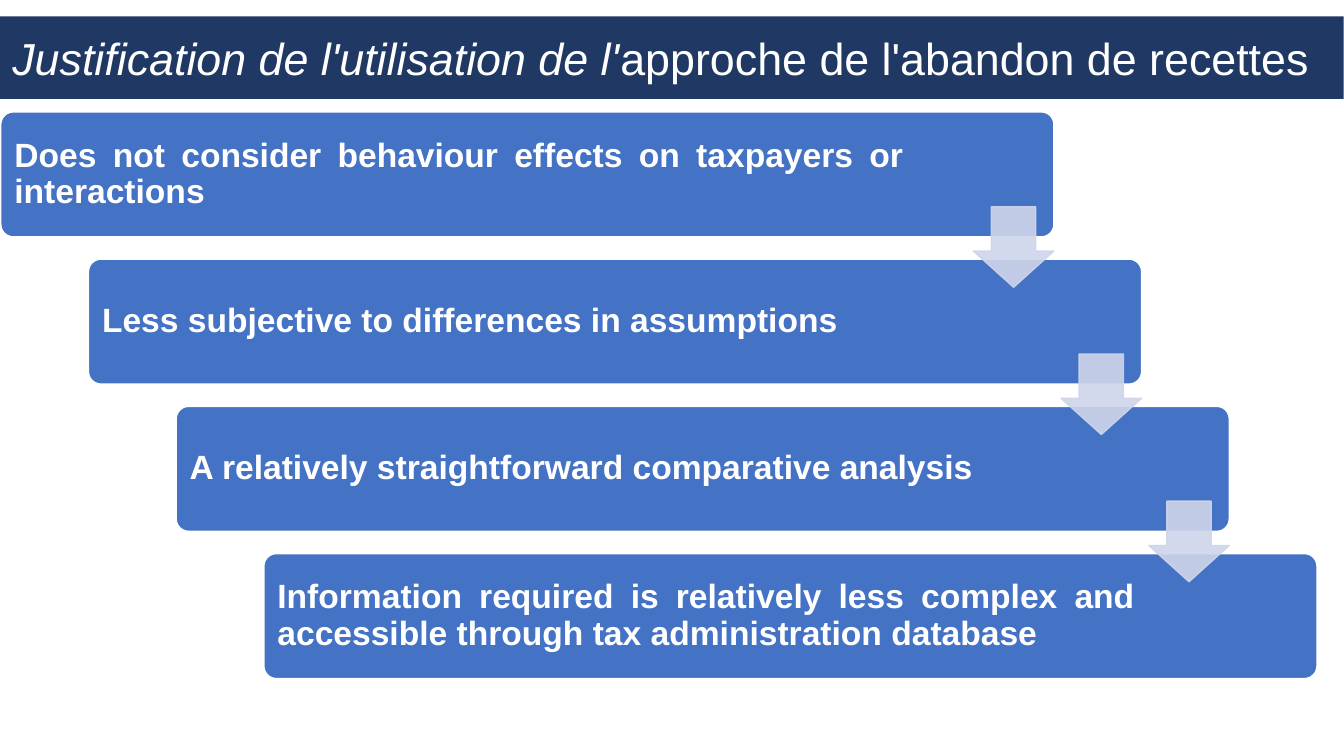
import pptx
import pptx.dml.color
import pptx.enum.shapes
import pptx.enum.text
import pptx.oxml
import pptx.oxml.ns
import pptx.util
from dataclasses import dataclass

Cm = pptx.util.Cm
Pt = pptx.util.Pt
RGB = pptx.dml.color.RGBColor.from_string
SHAPE = pptx.enum.shapes.MSO_SHAPE
ALIGN = pptx.enum.text.PP_ALIGN
MIDDLE = pptx.enum.text.MSO_ANCHOR.MIDDLE
qn = pptx.oxml.ns.qn


@dataclass(frozen=True)
class Theme:
    font: str = "Arial"
    title_size: int = 32
    step_size: int = 24
    banner: str = "203864"
    step: str = "4472C4"
    arrow: str = "CFD5EA"
    white: str = "FFFFFF"
    inset: float = 0.25


T = Theme()

TITLE = [("Justification de l'utilisation de l'", True),
         ("approche de l'abandon de recettes ", False)]
# Step text and the room kept free on its right for the arrows
STEPS = [("Does not consider behaviour effects on taxpayers or interactions", 3.7),
         ("Less subjective to differences in assumptions", 4.5),
         ("A relatively straightforward comparative analysis", 4.5),
         ("Information required is relatively less complex and "
          "accessible through tax administration database", 4.5)]


def set_frame(tf, right=T.inset):
    tf.word_wrap = True
    tf.vertical_anchor = MIDDLE
    tf.margin_left = tf.margin_top = tf.margin_bottom = Cm(T.inset)
    tf.margin_right = Cm(right)


def add_run(p, text, size, bold=False, italic=False):
    r = p.add_run()
    r.text = text
    r.font.name, r.font.size = T.font, Pt(size)
    r.font.bold, r.font.italic = bold, italic
    r.font.color.rgb = RGB(T.white)


def paint(sp, color, line, alpha=None):
    sp.shadow.inherit = False
    sp.fill.solid()
    sp.fill.fore_color.rgb = RGB(color)
    sp.line.color.rgb = RGB(line)
    sp.line.width = Pt(1)
    if alpha:
        for clr in sp._element.spPr.iter(qn("a:srgbClr")):
            clr.append(pptx.oxml.parse_xml(
                f'<a:alpha {pptx.oxml.ns.nsdecls("a")} val="{alpha * 1000}"/>'))


def title_banner(s, x, y, w, h):
    sp = s.shapes.title
    sp.left, sp.top, sp.width, sp.height = Cm(x), Cm(y), Cm(w), Cm(h)
    # Rounded outline for the placeholder
    sp._element.spPr.append(pptx.oxml.parse_xml(
        f'<a:prstGeom {pptx.oxml.ns.nsdecls("a")} prst="roundRect"><a:avLst/></a:prstGeom>'))
    sp.fill.solid()
    sp.fill.fore_color.rgb = RGB(T.banner)
    tf = sp.text_frame
    tf.auto_size = pptx.enum.text.MSO_AUTO_SIZE.NONE
    set_frame(tf)
    p = tf.paragraphs[0]
    p.alignment = ALIGN.CENTER
    for text, italic in TITLE:
        add_run(p, text, T.title_size, italic=italic)


def staircase(s, x, y, w, h):
    """Steps descend from the top left to the bottom right of the box."""
    step_w, step_h, arrow = 26.54, 3.15, 2.03
    gaps = len(STEPS) - 1
    dx, dy = (w - step_w) / gaps, (h - step_h) / gaps
    # Steps
    for i, (text, right) in enumerate(STEPS):
        sp = s.shapes.add_shape(SHAPE.ROUNDED_RECTANGLE, Cm(x + i * dx),
                                Cm(y + i * dy), Cm(step_w), Cm(step_h))
        sp.adjustments[0] = 0.1
        paint(sp, T.step, T.white)
        set_frame(sp.text_frame, right)
        p = sp.text_frame.paragraphs[0]
        p.alignment = ALIGN.JUSTIFY
        p.line_spacing = 0.9
        add_run(p, text, T.step_size, bold=True)
    # Arrows, flush with the right edge of the step above
    for i in range(gaps):
        sp = s.shapes.add_shape(SHAPE.DOWN_ARROW, Cm(x + i * dx + step_w - arrow),
                                Cm(y + i * dy + 2.39), Cm(arrow), Cm(arrow))
        sp.adjustments[0], sp.adjustments[1] = 0.45, 0.55
        paint(sp, T.arrow, T.arrow, alpha=90)
        # Wide shaft, short head
        sp.adjustments[0], sp.adjustments[1] = 0.55, 0.45


def main():
    prs = pptx.Presentation()
    prs.slide_width, prs.slide_height = Cm(33.87), Cm(19.05)
    s = prs.slides.add_slide(prs.slide_layouts[5])
    staircase(s, 0.02, 2.82, 33.17, 14.28)
    title_banner(s, -0.23, 0.41, 34.09, 2.08)
    prs.save("out.pptx")


if __name__ == "__main__":
    main()
